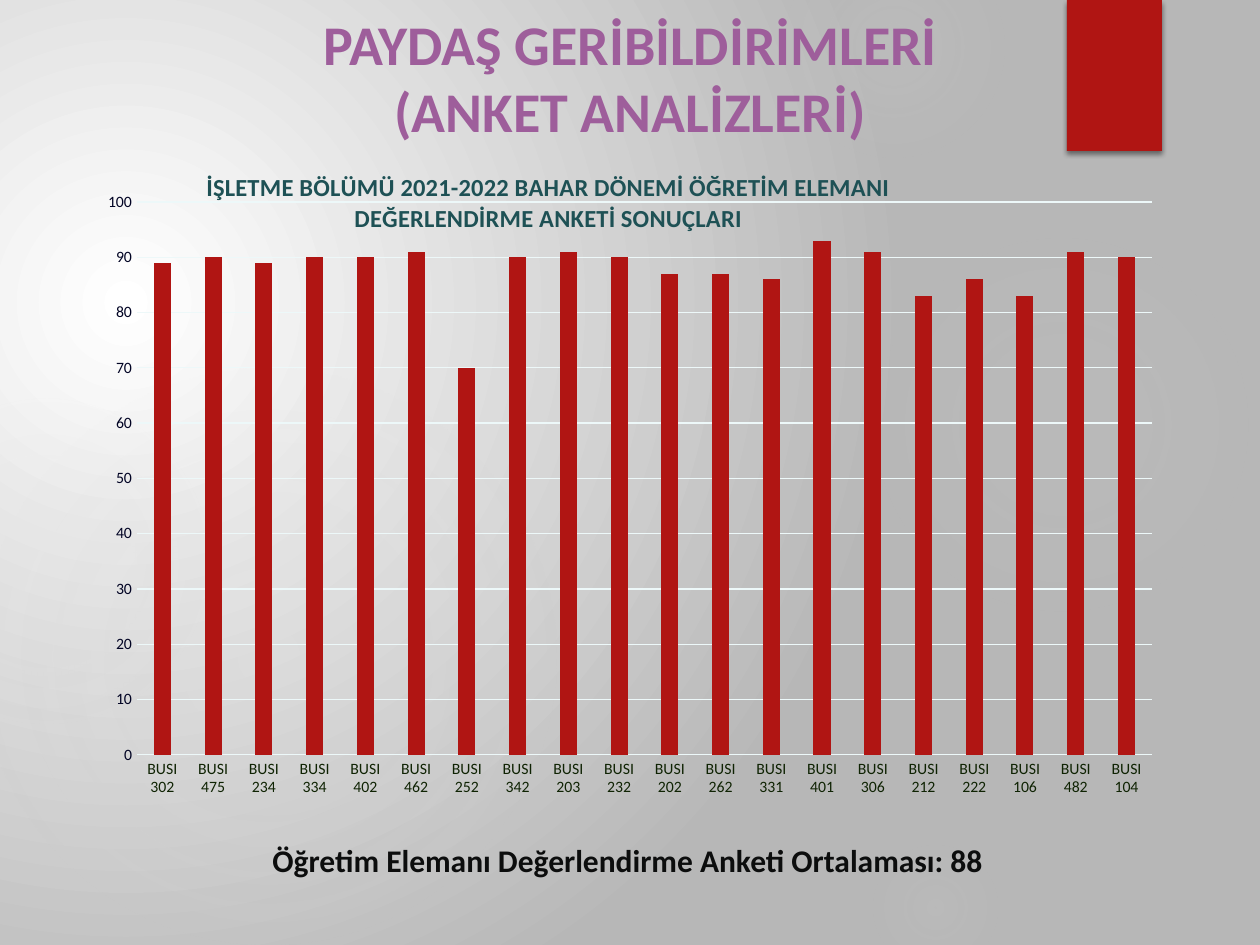
from lxml import etree
from pptx import Presentation
from pptx import util as u
from pptx.chart.data import CategoryChartData
from pptx.dml.color import RGBColor
from pptx.enum import chart as ch, shapes, text
from pptx.oxml import parse_xml
from pptx.oxml.ns import nsdecls, qn

PX = 914400 // 126
RED = RGBColor(0xB0, 0x15, 0x13)
GOLD = RGBColor(0xE6, 0xB7, 0x29)
PURPLE = RGBColor(0x9E, 0x5E, 0x9B)
TEAL = RGBColor(0x1E, 0x51, 0x55)
PALE = RGBColor(0xED, 0xF8, 0xF9)
GREEN = RGBColor(0x0F, 0x23, 0x03)
NAVY = RGBColor(0x02, 0x04, 0x24)
BLACK = RGBColor(0x0C, 0x0D, 0x0D)

TITLE = ["PAYDAŞ GERİBİLDİRİMLERİ", "(ANKET ANALİZLERİ)"]
CHART_TITLE = ("İŞLETME BÖLÜMÜ 2021-2022 BAHAR DÖNEMİ ÖĞRETİM ELEMANI "
               "DEĞERLENDİRME ANKETİ SONUÇLARI")
CAPTION = ["Öğretim Elemanı Değerlendirme Anketi Ortalaması: 88"]
SCORES = [(302, 89), (475, 90), (234, 89), (334, 90), (402, 90), (462, 91), (252, 70),
          (342, 90), (203, 91), (232, 90), (202, 87), (262, 87), (331, 86), (401, 93),
          (306, 91), (212, 83), (222, 86), (106, 83), (482, 91), (104, 90)]
# left, top, diameter, gradient stops as (position %, opacity %)
GLOWS = [(868, 231, 388, [(0, 7), (36, 6), (69, 0)]),
         (784, -63, 220, [(0, 14), (36, 7), (73, 0)]),
         (868, 840, 136, [(0, 9), (36, 5), (66, 0)]),
         (-21, 368, 577, [(0, 11), (36, 10), (75, 0)]),
         (-116, 399, 325, [(0, 8), (36, 8), (72, 0)])]
CHART = (87, 84, 1087, 727)
PLOT = (137, 202, 1015, 553)
CHART_TITLE_AT = (202, 166)


def px(*lengths):
    return [n * PX for n in lengths]


def radial(stops, to):
    gs = "".join(f'<a:gs pos="{pos * 1000}"><a:srgbClr val="{color}">'
                 f'<a:alpha val="{alpha * 1000}"/></a:srgbClr></a:gs>'
                 for pos, color, alpha in stops)
    rect = " ".join(f'{side}="{n * 1000}"' for side, n in zip("ltrb", to))
    return parse_xml(f'<a:gradFill {nsdecls("a")} rotWithShape="1"><a:gsLst>{gs}</a:gsLst>'
                     f'<a:path path="circle"><a:fillToRect {rect}/></a:path></a:gradFill>')


def set_font(font, color, **values):
    font.color.rgb = color
    for key, value in {"name": "Calibri", **values}.items():
        setattr(font, key, value)


def add_text(box, lines, size, color, align, wrap):
    tf = s.shapes.add_textbox(*px(*box)).text_frame
    tf.word_wrap = wrap
    for i, line in enumerate(lines):
        p = tf.paragraphs[0] if i == 0 else tf.add_paragraph()
        p.alignment = align
        r = p.add_run()
        r.text = line
        set_font(r.font, color, size=u.Pt(size), bold=True)


def place(el, index, left, top, width=None, height=None):
    """Put a manual layout, as fractions of the chart, on a chart element."""
    for old in el.findall(qn("c:layout")):
        el.remove(old)
    layout = parse_xml(f'<c:layout {nsdecls("c")}><c:manualLayout/></c:layout>')
    parts = [("xMode", "edge"), ("yMode", "edge"),
             ("x", round((left - CHART[0]) / CHART[2], 4)),
             ("y", round((top - CHART[1]) / CHART[3], 4))]
    if width:
        parts = [("layoutTarget", "inner")] + parts + [
            ("w", round(width / CHART[2], 4)), ("h", round(height / CHART[3], 4))]
    for tag, value in parts:
        etree.SubElement(layout[0], qn("c:" + tag)).set("val", str(value))
    el.insert(index, layout)


prs = Presentation()
prs.slide_width, prs.slide_height = u.Inches(10), u.Inches(7.5)
s = prs.slides.add_slide(prs.slide_layouts[6])

# Background
bg = parse_xml(f'<p:bg {nsdecls("p", "a")}><p:bgPr><a:effectLst/></p:bgPr></p:bg>')
bg[0].insert(0, radial([(0, "FFFFFF", 100), (100, "B7B7B7", 100)], (45, 65, 125, 100)))
s.element.cSld.insert(0, bg)

# Soft glows
for left, top, size, stops in GLOWS:
    sp = s.shapes.add_shape(shapes.MSO_SHAPE.OVAL, *px(left, top, size, size))
    sp.shadow.inherit = False
    sp.line.fill.background()
    fill = radial([(pos, "D9D9D9", alpha) for pos, alpha in stops], (50,) * 4)
    sp.element.spPr.find(qn("a:prstGeom")).addnext(fill)

# Red tab with shadow
tab = s.shapes.add_shape(shapes.MSO_SHAPE.RECTANGLE, *px(1067, 0, 95, 151))
tab.shadow.inherit = False
tab.fill.solid()
tab.fill.fore_color.rgb = RED
tab.line.fill.background()
tab.element.spPr.find(qn("a:effectLst")).append(parse_xml(
    f'<a:outerShdw {nsdecls("a")} blurRad="38100" dist="25400" dir="5400000" rotWithShape="0">'
    '<a:srgbClr val="000000"><a:alpha val="45000"/></a:srgbClr></a:outerShdw>'))

# Title
add_text((144, 3, 973, 190), TITLE, 32, PURPLE, text.PP_ALIGN.CENTER, True)

# Chart: only the middle series holds values
data = CategoryChartData()
data.categories = [f"BUSI {code}" for code, _ in SCORES]
blank = [None] * len(SCORES)
for name, values in [("Series 1", blank), ("Series 2", [v for _, v in SCORES]),
                     ("Series 3", blank)]:
    data.add_series(name, values)
chart = s.shapes.add_chart(ch.XL_CHART_TYPE.COLUMN_CLUSTERED, *px(*CHART), data).chart
chart.has_legend = False
chart.font.name, chart.font.size = "Calibri", u.Pt(10)
plot = chart.plots[0]
plot.gap_width, plot.overlap, plot.vary_by_categories = 2, 2, False
for series, color in zip(plot.series, (RED, RED, GOLD)):
    series.format.fill.solid()
    series.format.fill.fore_color.rgb = color

# Axes
cat, val = chart.category_axis, chart.value_axis
for axis, color in ((cat, GREEN), (val, NAVY)):
    axis.major_tick_mark = axis.minor_tick_mark = ch.XL_TICK_MARK.NONE
    set_font(axis.tick_labels.font, color, size=u.Pt(9))
val.minimum_scale, val.maximum_scale, val.major_unit = 0, 100, 10
val.format.line.fill.background()
for line in (cat.format.line, val.major_gridlines.format.line):
    line.color.rgb, line.width = PALE, u.Pt(0.75)

# Chart title over the plot
tf = chart.chart_title.text_frame
tf.text = CHART_TITLE
set_font(tf.paragraphs[0].runs[0].font, TEAL, size=u.Pt(14), bold=True)
title = chart.chart_title._element
place(title, 1, *CHART_TITLE_AT)
title.find(qn("c:overlay")).set("val", "1")
place(chart._chartSpace.chart.plotArea, 0, *PLOT)

# Average
add_text((260, 835, 742, 50), CAPTION, 18, BLACK, text.PP_ALIGN.LEFT, False)

prs.save("out.pptx")
